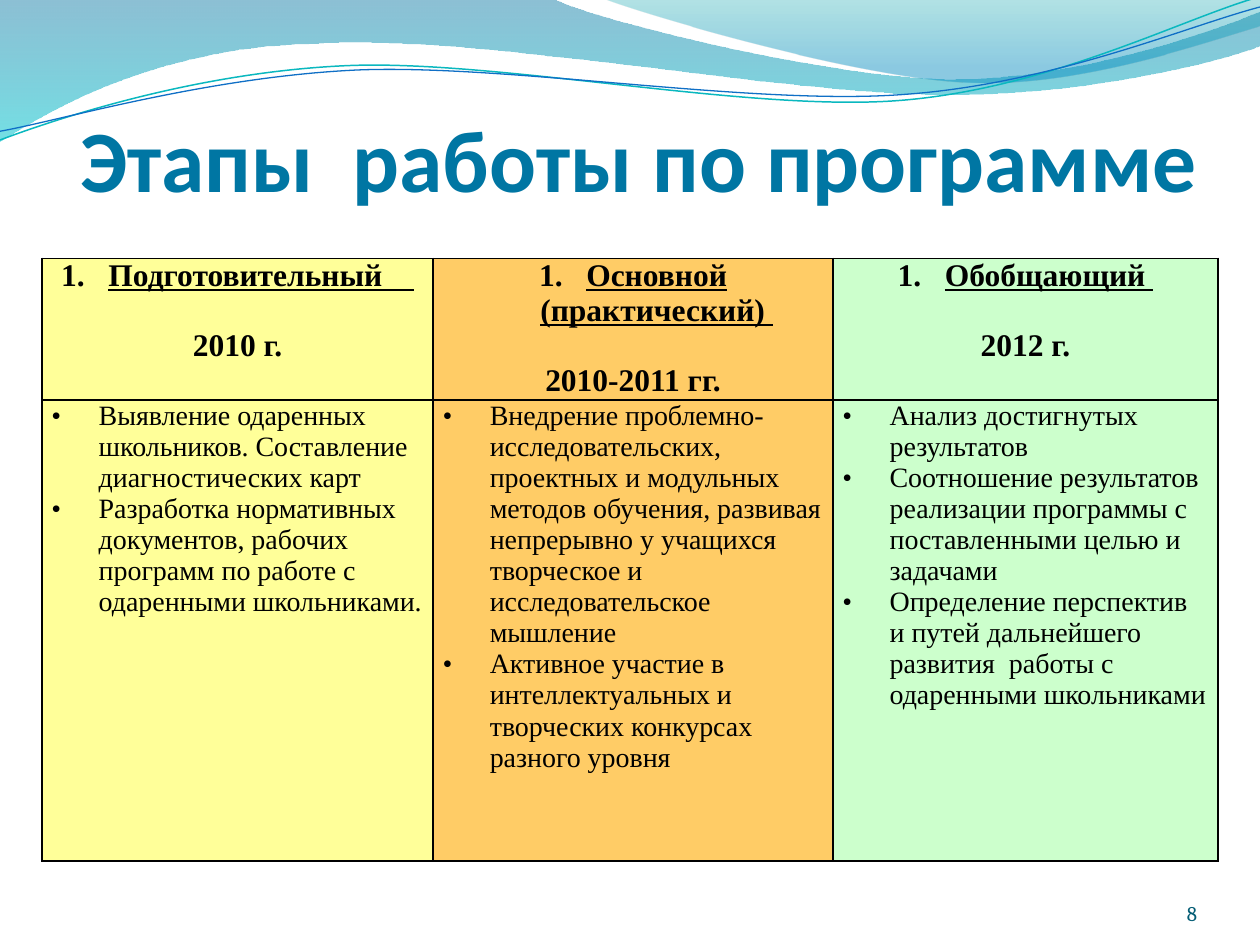
from pptx import Presentation, util as u
from pptx.dml.color import RGBColor
from pptx.enum import text
from pptx.oxml import parse_xml
from pptx.oxml.ns import nsdecls, qn

Pt = u.Pt


def rgb(value):
    return RGBColor.from_string(value)


def element(tag, attributes="", content=""):
    return parse_xml(f"<a:{tag} {nsdecls('a')} {attributes}>{content}</a:{tag}>")


class Deck:
    body_font = "Times New Roman"
    indent = 27
    border = "000000"

    def __init__(self, width, height):
        self.presentation = Presentation()
        self.presentation.slide_width = Pt(width)
        self.presentation.slide_height = Pt(height)
        self.slide = self.presentation.slides.add_slide(self.presentation.slide_layouts[6])

    def outline(self, start, segments, closed):
        """Draw straight (1 point) and cubic (3 points) segments."""
        builder = self.slide.shapes.build_freeform(*map(Pt, start), scale=1.0)
        builder.add_line_segments([tuple(map(Pt, segment[-1])) for segment in segments],
                                  close=closed)
        shape = builder.convert_to_shape()
        shape.shadow.inherit = False
        for line, segment in zip(list(shape._element.iter(qn("a:lnTo"))), segments):
            if len(segment) == 3:
                points = "".join(f'<a:pt x="{Pt(x) - shape.left}" y="{Pt(y) - shape.top}"/>'
                                 for x, y in segment)
                line.getparent().replace(line, element("cubicBezTo", content=points))
        return shape

    def wave(self, start, segments, stops):
        shape = self.outline(start, segments, True)
        shape.line.fill.background()
        shape.fill.gradient()
        shape.fill.gradient_angle = 270
        for stop, (position, color, _) in zip(shape.fill.gradient_stops, stops):
            stop.position = position
            stop.color.rgb = rgb(color)
        for node, (_, _, opacity) in zip(shape._element.iter(qn("a:srgbClr")), stops):
            node.append(element("alpha", f'val="{opacity * 1000}"'))

    def curve(self, start, segments, color, width):
        shape = self.outline(start, segments, False)
        shape.fill.background()
        shape.line.color.rgb = rgb(color)
        shape.line.width = Pt(width)

    def style(self, paragraph, font, size, color, bold=False, underline=False):
        for run in paragraph.runs:
            run.font.name, run.font.size = font, Pt(size)
            run.font.bold, run.font.underline = bold, underline
            run.font.color.rgb = rgb(color)

    def label(self, box, wording, align, font, size, color, bold=False, top_inset=0):
        frame = self.slide.shapes.add_textbox(*map(Pt, box)).text_frame
        frame.word_wrap = True
        frame.vertical_anchor = text.MSO_ANCHOR.BOTTOM
        frame.margin_left = frame.margin_right = frame.margin_bottom = 0
        frame.margin_top = Pt(top_inset)
        frame.text = wording
        paragraph = frame.paragraphs[0]
        paragraph.alignment = align
        self.style(paragraph, font, size, color, bold)
        return paragraph

    def hang(self, paragraph, *bullet):
        properties = paragraph._p.get_or_add_pPr()
        properties.set("marL", str(Pt(self.indent)))
        properties.set("indent", str(Pt(-self.indent)))
        properties.extend(bullet)

    def cell(self, cell, fill):
        cell.margin_left = cell.margin_right = Pt(5.4)
        cell.margin_top = cell.margin_bottom = 0
        color = f'<a:solidFill><a:srgbClr val="{self.border}"/></a:solidFill>'
        for side in ("lnL", "lnR", "lnT", "lnB"):
            cell._tc.get_or_add_tcPr().append(element(side, f'w="{Pt(1)}"', color))
        cell.fill.solid()
        cell.fill.fore_color.rgb = rgb(fill)

    def stage_table(self, left, top, widths, heights, stages):
        table = self.slide.shapes.add_table(
            len(heights), len(widths), Pt(left), Pt(top),
            Pt(sum(widths)), Pt(sum(heights))).table
        table.first_row = table.horz_banding = False
        for row, height in zip(table.rows, heights):
            row.height = Pt(height)
        for index, (width, (name, years, tasks, fill)) in enumerate(zip(widths, stages)):
            table.columns[index].width = Pt(width)
            heading, content = table.cell(0, index), table.cell(1, index)
            self.cell(heading, fill)
            self.cell(content, fill)

            heading.text_frame.text = f"{name}\n{years}"
            title, date = heading.text_frame.paragraphs
            date.space_before = Pt(20)
            self.hang(title, element("buAutoNum", 'type="arabicPeriod"'))
            self.hang(date)
            for paragraph in (title, date):
                paragraph.alignment = text.PP_ALIGN.CENTER
                self.style(paragraph, self.body_font, 18, "000000", True, paragraph is title)

            content.text_frame.text = "\n".join(tasks)
            for paragraph in content.text_frame.paragraphs:
                self.hang(paragraph, element("buFont", f'typeface="{self.body_font}"'),
                          element("buChar", 'char="•"'))
                self.style(paragraph, self.body_font, 16, "000000")

    def save(self):
        self.presentation.save("out.pptx")


STAGES = [
    ("Подготовительный    ", "2010 г.",
     ["Выявление одаренных школьников. Составление диагностических карт",
      "Разработка нормативных документов, рабочих программ по работе с "
      "одаренными школьниками."], "FFFF99"),
    ("Основной (практический) ", "2010-2011 гг.",
     ["Внедрение проблемно- исследовательских, проектных и модульных методов "
      "обучения, развивая непрерывно у учащихся творческое и исследовательское мышление",
      "Активное участие в  интеллектуальных и творческих конкурсах разного уровня"],
     "FFCC66"),
    ("Обобщающий ", "2012 г.",
     ["Анализ достигнутых результатов",
      "Соотношение результатов реализации программы с поставленными целью и задачами",
      "Определение перспектив и путей дальнейшего развития  работы с "
      "одаренными школьниками"], "CCFFCC"),
]


def main():
    deck = Deck(720, 540)

    # Waves along the top edge
    deck.wave((0, 0), [
        [(317, -0.5)],
        [(343, 12), (478, 45), (546, 45)],
        [(614, 45), (690, 19), (720, 6.5)],
        [(720.5, 26)],
        [(708, 32), (626, 55), (537, 54)],
        [(448, 54), (275, 20), (185, 24.5)],
        [(93, 26), (33, 60), (-0.5, 81)],
    ], [(0, "0074A1", 45), (1, "00C6CF", 55)])
    deck.wave((345, -0.5), [
        [(366, 8), (491, 45), (554, 47)],
        [(617, 50), (692, 23), (720, 15)],
        [(720, 0)],
    ], [(0, "00A1A9", 30), (0.8, "008BBF", 45)])

    # Thin curves over the waves
    deck.curve((0, 80), [
        [(34.5, 67), (114, 41), (199, 37.5)],
        [(284, 34), (427, 64), (513, 57.5)],
        [(599, 51), (675, 11), (718.5, -1.5)],
    ], "0AB8BF", 0.85)
    deck.curve((0, 75), [
        [(34, 69), (118, 44), (204, 40)],
        [(290, 36.5), (430, 60.5), (516, 54)],
        [(602, 48), (678, 15), (720, 4)],
    ], "0F6FC6", 0.75)

    # Stages of the programme
    deck.stage_table(24, 147.6, [223.5, 228.5, 220], [81, 263.3], STAGES)

    # Title and slide number
    title = deck.label((36, 30, 654, 90), "Этапы  работы по программе",
                       text.PP_ALIGN.CENTER, "Calibri", 50, "0076A3", True, 3.6)
    title._p.get_or_add_pPr().set("marL", str(Pt(4.6)))
    deck.label((624, 500.5, 60, 28.5), "8", text.PP_ALIGN.RIGHT, "Cambria", 12, "045D75")

    deck.save()


if __name__ == "__main__":
    main()
